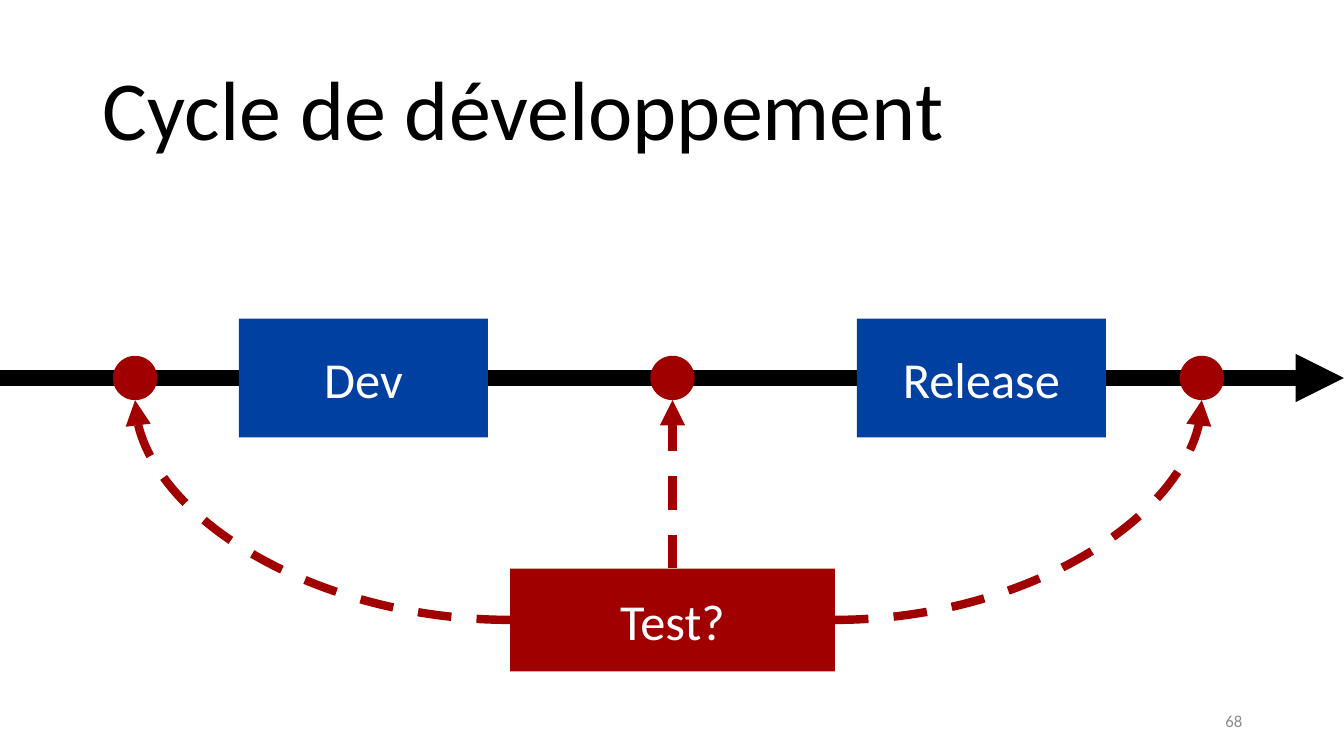
from lxml.etree import SubElement
from pptx import Presentation
from pptx.dml.color import RGBColor
from pptx.enum.dml import MSO_LINE
from pptx.enum.shapes import MSO_CONNECTOR, MSO_SHAPE
from pptx.enum.text import MSO_ANCHOR, MSO_AUTO_SIZE, PP_ALIGN
from pptx.oxml.ns import qn
from pptx.util import Emu, Pt

BLACK = RGBColor(0x00, 0x00, 0x00)
WHITE = RGBColor(0xFF, 0xFF, 0xFF)
GRAY = RGBColor(0x8C, 0x8C, 0x8C)
BLUE = RGBColor(0x00, 0x40, 0xA0)
RED = RGBColor(0xA0, 0x00, 0x00)

SLIDE_WIDTH, SLIDE_HEIGHT = 1333, 750
AXIS_Y = 375
STAGE_TOP, STAGE_WIDTH, STAGE_HEIGHT = 316, 247, 118
TEST_LEFT, TEST_TOP, TEST_WIDTH, TEST_HEIGHT = 506, 564, 322, 102
DOT_SIZE = 44


def px(*lengths):
    """Turn lengths in px, 100 to the inch, into a list of EMU."""
    return [Emu(length * 9144) for length in lengths]


def write_text(shape, text, size, color, alignment):
    """Fill a shape with one vertically centred, formatted line."""
    frame = shape.text_frame
    frame.text = text
    frame.word_wrap = True
    frame.auto_size = MSO_AUTO_SIZE.NONE
    frame.vertical_anchor = MSO_ANCHOR.MIDDLE
    paragraph = frame.paragraphs[0]
    paragraph.alignment = alignment
    font = paragraph.runs[0].font
    font.name, font.size, font.color.rgb = "Calibri", Pt(size), color


def add_title(slide, text):
    """Place the slide title in its placeholder."""
    title = slide.shapes.title
    title.left, title.top, title.width, title.height = px(92, 40, 1150, 145)
    write_text(title, text, 60, BLACK, PP_ALIGN.LEFT)
    title.text_frame.paragraphs[0].line_spacing = 0.9


def add_filled(slide, kind, left, top, width, height, color):
    """Add a flat shape without outline."""
    shape = slide.shapes.add_shape(kind, *px(left, top, width, height))
    shape.shadow.inherit = False
    shape.fill.solid()
    shape.fill.fore_color.rgb = color
    shape.line.fill.background()
    return shape


def add_box(slide, text, left, top, width, height, color):
    """Add a coloured rectangle with a white label."""
    box = add_filled(slide, MSO_SHAPE.RECTANGLE, left, top, width, height, color)
    write_text(box, text, 36, WHITE, PP_ALIGN.CENTER)
    return box


def add_dot(slide, center_x):
    """Add a test point on the time axis."""
    add_filled(slide, MSO_SHAPE.OVAL, center_x - DOT_SIZE // 2,
               AXIS_Y - DOT_SIZE // 2, DOT_SIZE, DOT_SIZE, RED)


def add_arrow(slide, kind, start, end, color, weight, dash=None):
    """Add a connector that ends in a triangle."""
    arrow = slide.shapes.add_connector(kind, *px(*start, *end))
    arrow.line.color.rgb = color
    arrow.line.width = Pt(weight)
    arrow.line.dash_style = dash
    properties = arrow._element.spPr
    SubElement(properties.find(qn("a:ln")), qn("a:tailEnd"), type="triangle")
    SubElement(properties, qn("a:effectLst"))
    if kind == MSO_CONNECTOR.CURVE:
        properties.find(qn("a:prstGeom")).set("prst", "curvedConnector2")
    return arrow


def main():
    """Build the development cycle slide."""
    presentation = Presentation()
    presentation.slide_width, presentation.slide_height = px(SLIDE_WIDTH, SLIDE_HEIGHT)
    slide = presentation.slides.add_slide(presentation.slide_layouts[5])

    add_title(slide, "Cycle de développement")
    number = slide.shapes.add_textbox(*px(942, 695, 300, 40))
    write_text(number, "68", 12, GRAY, PP_ALIGN.RIGHT)

    add_arrow(slide, MSO_CONNECTOR.STRAIGHT, (0, AXIS_Y), (SLIDE_WIDTH, AXIS_Y), BLACK, 11.5)
    for text, left in (("Dev", 237), ("Release", 850)):
        add_box(slide, text, left, STAGE_TOP, STAGE_WIDTH, STAGE_HEIGHT, BLUE)
    test_box = add_box(slide, "Test?", TEST_LEFT, TEST_TOP, TEST_WIDTH, TEST_HEIGHT, RED)

    test_x = TEST_LEFT + TEST_WIDTH // 2
    test_y = TEST_TOP + TEST_HEIGHT // 2
    links = (
        (134, MSO_CONNECTOR.CURVE, (TEST_LEFT, test_y)),
        (test_x, MSO_CONNECTOR.STRAIGHT, (test_x, TEST_TOP)),
        (1192, MSO_CONNECTOR.CURVE, (TEST_LEFT + TEST_WIDTH, test_y)),
    )
    for dot_x, kind, start in links:
        add_dot(slide, dot_x)
        end = (dot_x, AXIS_Y + DOT_SIZE // 2)
        arrow = add_arrow(slide, kind, start, end, RED, 6, MSO_LINE.DASH)
        if kind == MSO_CONNECTOR.STRAIGHT:
            arrow.begin_connect(test_box, 0)

    presentation.save("out.pptx")


if __name__ == "__main__":
    main()
